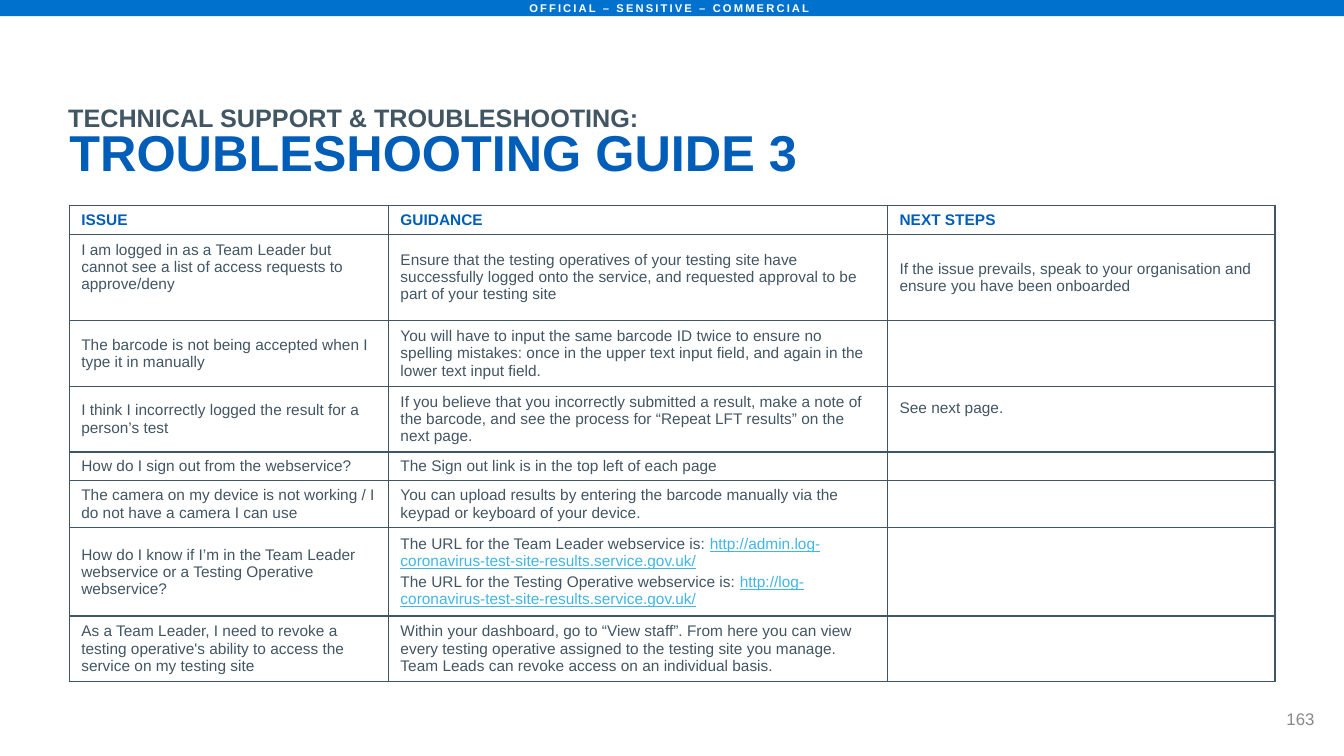
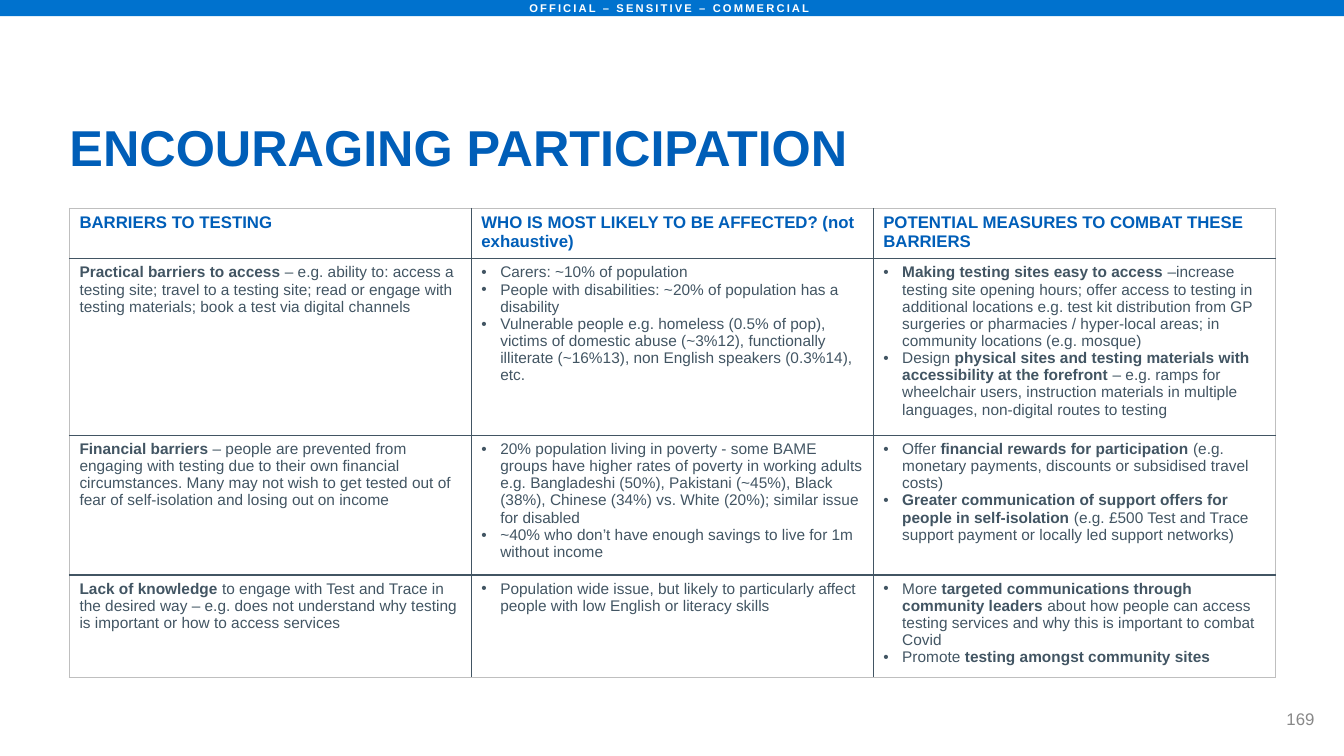
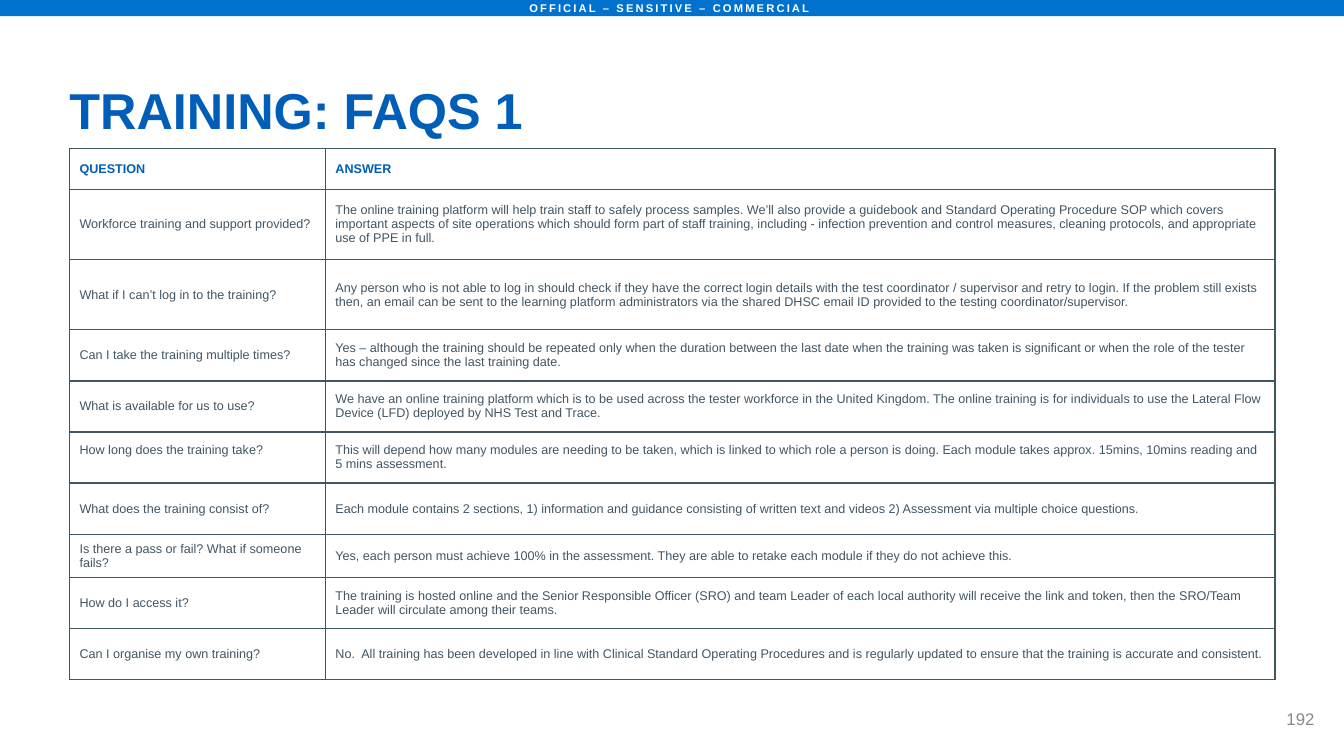
import pptx
import pptx.dml.color
import pptx.enum.shapes
import pptx.enum.text
import pptx.oxml.ns
import pptx.util
from lxml import etree

Pt = pptx.util.Pt
RGBColor = pptx.dml.color.RGBColor
ALIGN = pptx.enum.text.PP_ALIGN
ANCHOR = pptx.enum.text.MSO_ANCHOR
qn = pptx.oxml.ns.qn

BLUE = RGBColor(0x00, 0x5E, 0xB8)
BAND_BLUE = RGBColor(0x00, 0x72, 0xCE)
LINK_BLUE = RGBColor(0x41, 0xB6, 0xE6)
SLATE = RGBColor(0x42, 0x55, 0x63)
GREY = RGBColor(0x88, 0x88, 0x88)
PALE_GREY = RGBColor(0xBF, 0xBF, 0xBF)
WHITE = RGBColor(0xFF, 0xFF, 0xFF)

FONT = "Arial"
SLIDE_W, SLIDE_H = 960, 540
LEFT, TABLE_W = 49.6, 861.2
INDENT = 13.5

GUIDE_ROWS = [
    ["ISSUE", "GUIDANCE", "NEXT STEPS"],
    ["I am logged in as a Team Leader but cannot see a list of access requests to approve/deny",
     "Ensure that the testing operatives of your testing site have successfully logged onto the "
     "service, and requested approval to be part of your testing site",
     "If the issue prevails, speak to your organisation and ensure you have been onboarded"],
    ["The barcode is not being accepted when I type it in manually",
     "You will have to input the same barcode ID twice to ensure no spelling mistakes: once in "
     "the upper text input field, and again in the lower text input field.", ""],
    ["I think I incorrectly logged the result for a person’s test",
     "If you believe that you incorrectly submitted a result, make a note of the barcode, and see "
     "the process for “Repeat LFT results” on the next page.",
     "See next page."],
    ["How do I sign out from the webservice?",
     "The Sign out link is in the top left of each page", ""],
    ["The camera on my device is not working / I do not have a camera I can use",
     "You can upload results by entering the barcode manually via the keypad or keyboard of your "
     "device.", ""],
    ["How do I know if I’m in the Team Leader webservice or a Testing Operative webservice?",
     "The URL for the Team Leader webservice is: "
     "*http://admin.log-coronavirus-test-site-results.service.gov.uk/*\n"
     "The URL for the Testing Operative webservice is: "
     "*http://log-coronavirus-test-site-results.service.gov.uk/*", ""],
    ["As a Team Leader, I need to revoke a testing operative's ability to access the service on my "
     "testing site",
     "Within your dashboard, go to “View staff”. From here you can view every testing operative "
     "assigned to the testing site you manage. Team Leads can revoke access on an individual "
     "basis.", ""],
]

BARRIER_ROWS = [
    ["BARRIERS TO TESTING", "WHO IS MOST LIKELY TO BE AFFECTED? (not exhaustive)",
     "POTENTIAL MEASURES TO COMBAT THESE BARRIERS"],
    ["*Practical barriers to access *– e.g. ability to: access a testing site; travel to a testing "
     "site; read or engage with testing materials; book a test via digital channels",
     "Carers: ~10% of population\n"
     "People with disabilities: ~20% of population has a disability\n"
     "Vulnerable people e.g. homeless (0.5% of pop), victims of domestic abuse (~3%12), "
     "functionally illiterate (~16%13), non English speakers (0.3%14), etc.",
     "*Making testing sites easy to access *–increase testing site opening hours; offer access to "
     "testing in additional locations e.g. test kit distribution from GP surgeries or pharmacies / "
     "hyper-local areas; in community locations (e.g. mosque)\n"
     "Design *physical sites and testing materials with accessibility at the forefront *– e.g. "
     "ramps for wheelchair users, instruction materials in multiple languages, non-digital routes "
     "to testing"],
    ["*Financial barriers *– people are prevented from engaging with testing due to their own "
     "financial circumstances. Many may not wish to get tested out of fear of self-isolation and "
     "losing out on income",
     "20% population living in poverty - some BAME groups have higher rates of poverty in working "
     "adults e.g. Bangladeshi (50%), Pakistani (~45%), Black (38%), Chinese (34%) vs. White (20%); "
     "similar issue for disabled\n"
     "~40% who don’t have enough savings to live for 1m without income",
     "Offer *financial rewards for participation *(e.g. monetary payments, discounts or subsidised "
     "travel costs)\n"
     "*Greater communication of support offers for people in self-isolation* (e.g. £500 Test and "
     "Trace support payment or locally led support networks)"],
    ["*Lack of knowledge *to engage with Test and Trace in the desired way – e.g. does not "
     "understand why testing is important or how to access services",
     "Population wide issue, but likely to particularly affect people with low English or literacy "
     "skills",
     "More *targeted communications through community leaders* about how people can access testing "
     "services and why this is important to combat Covid\n"
     "Promote *testing amongst community sites*"],
]

FAQ_ROWS = [
    ["QUESTION", "ANSWER"],
    ["Workforce training and support provided?",
     "The online training platform will help train staff to safely process samples. We’ll also "
     "provide a guidebook and Standard Operating Procedure SOP which covers important aspects of "
     "site operations which should form part of staff training, including - infection prevention "
     "and control measures, cleaning protocols, and appropriate use of PPE in full."],
    ["What if I can’t log in to the training?",
     "Any person who is not able to log in should check if they have the correct login details "
     "with the test coordinator / supervisor and retry to login. If the problem still exists then, "
     "an email can be sent to the learning platform administrators via the shared DHSC email ID "
     "provided to the testing coordinator/supervisor."],
    ["Can I take the training multiple times?",
     "Yes – although the training should be repeated only when the duration between the last date "
     "when the training was taken is significant or when the role of the tester has changed since "
     "the last training date."],
    ["What is available for us to use?",
     "We have an online training platform which is to be used across the tester workforce in the "
     "United Kingdom. The online training is for individuals to use the Lateral Flow Device (LFD) "
     "deployed by NHS Test and Trace."],
    ["How long does the training take?",
     "This will depend how many modules are needing to be taken, which is linked to which role a "
     "person is doing. Each module takes approx. 15mins, 10mins reading and 5 mins assessment."],
    ["What does the training consist of?",
     "Each module contains 2 sections, 1) information and guidance consisting of written text and "
     "videos 2) Assessment via multiple choice questions."],
    ["Is there a pass or fail? What if someone fails?",
     "Yes, each person must achieve 100% in the assessment. They are able to retake each module if "
     "they do not achieve this."],
    ["How do I access it?",
     "The training is hosted online and the Senior Responsible Officer (SRO) and team Leader of "
     "each local authority will receive the link and token, then the SRO/Team Leader will "
     "circulate among their teams."],
    ["Can I organise my own training?",
     "No.  All training has been developed in line with Clinical Standard Operating Procedures and "
     "is regularly updated to ensure that the training is accurate and consistent."],
]


def add_run(p, text, size, color, bold=False):
    r = p.add_run()
    r.text = text
    r.font.name = FONT
    r.font.size = Pt(size)
    r.font.bold = bold
    r.font.color.rgb = color
    return r


def set_frame(tf, anchor, insets=(7.2, 3.6)):
    tf.word_wrap = True
    tf.vertical_anchor = anchor
    tf.margin_left = tf.margin_right = Pt(insets[0])
    tf.margin_top = tf.margin_bottom = Pt(insets[1])


def add_text(slide, box, text, size, color, bold=False, align=ALIGN.LEFT, anchor=ANCHOR.TOP):
    tf = slide.shapes.add_textbox(*map(Pt, box)).text_frame
    set_frame(tf, anchor)
    p = tf.paragraphs[0]
    p.alignment = align
    add_run(p, text, size, color, bold)


def add_band(slide):
    sp = slide.shapes.add_shape(pptx.enum.shapes.MSO_SHAPE.RECTANGLE, 0, 0, Pt(SLIDE_W), Pt(11.5))
    sp.shadow.inherit = False
    sp.fill.solid()
    sp.fill.fore_color.rgb = BAND_BLUE
    sp.line.fill.background()
    set_frame(sp.text_frame, ANCHOR.MIDDLE, (0, 3.6))
    p = sp.text_frame.paragraphs[0]
    p.alignment = ALIGN.CENTER
    r = add_run(p, "OFFICIAL – SENSITIVE – COMMERCIAL ", 8, WHITE, True)
    r.font._element.set("spc", "150")


def add_page(prs, title, title_top, number):
    """Add a slide with its title, classification band and page number."""
    slide = prs.slides.add_slide(prs.slide_layouts[5])
    sp = slide.shapes.title
    sp.left, sp.top, sp.width, sp.height = map(Pt, (LEFT, title_top, 794, 39.6))
    tf = sp.text_frame
    set_frame(tf, ANCHOR.TOP, (0, 0))
    tf.auto_size = pptx.enum.text.MSO_AUTO_SIZE.SHAPE_TO_FIT_TEXT
    p = tf.paragraphs[0]
    p.alignment = ALIGN.LEFT
    p.line_spacing = 0.9
    add_run(p, title, 36, BLUE, True)
    add_band(slide)
    add_text(slide, (870, 487, 76, 53), number, 12, GREY, align=ALIGN.RIGHT, anchor=ANCHOR.MIDDLE)
    return slide


def add_bullet(p):
    pPr = p._p.get_or_add_pPr()
    pPr.set("marL", str(Pt(INDENT)))
    pPr.set("indent", str(-Pt(INDENT)))
    etree.SubElement(pPr, qn("a:buFont"), typeface=FONT)
    etree.SubElement(pPr, qn("a:buChar"), char="•")


def set_borders(cell, colors):
    """Draw the left, right, top and bottom lines of a cell."""
    tcPr = cell._tc.get_or_add_tcPr()
    for side, color in zip("LRTB", colors):
        ln = etree.SubElement(tcPr, qn("a:ln" + side), w=str(Pt(1)))
        fill = etree.SubElement(ln, qn("a:solidFill"))
        etree.SubElement(fill, qn("a:srgbClr"), val=str(color))


def fill_cell(cell, text, size, color, bold=False, bullets=False, links=False, space_after=0):
    """Write one paragraph a line; stars enclose bold text, or links where links is set."""
    tf = cell.text_frame
    for i, line in enumerate(text.split("\n")):
        p = tf.paragraphs[0] if i == 0 else tf.add_paragraph()
        p.space_after = Pt(space_after)
        if bullets:
            add_bullet(p)
        for j, part in enumerate(line.split("*")):
            marked = j % 2 == 1
            if part and marked and links:
                add_run(p, part, size, LINK_BLUE).font.underline = True
            elif part:
                add_run(p, part, size, color, bold or marked)
        if not line:
            etree.SubElement(p._p, qn("a:endParaRPr"), sz=str(size * 100))


def add_grid(slide, top, rows, widths, heights, size, head_size=None, anchor=ANCHOR.MIDDLE,
             side_inset=7.2, edge=SLATE, bullet_from=None, links=False, space_after=0, raised=None):
    """Add a table; raised maps (row, column) to extra bottom margin, edge colours the outline."""
    frame = slide.shapes.add_table(len(rows), len(widths), Pt(LEFT), Pt(top),
                                   Pt(TABLE_W), Pt(sum(heights)))
    table = frame.table
    table.first_row = table.horz_banding = False
    for column, width in zip(table.columns, widths):
        column.width = Pt(width)
    for row, height in zip(table.rows, heights):
        row.height = Pt(height)
    last_row, last_col = len(rows) - 1, len(widths) - 1
    for i, row in enumerate(rows):
        for j, text in enumerate(row):
            cell = table.cell(i, j)
            cell.vertical_anchor = anchor
            cell.margin_left = cell.margin_right = Pt(side_inset)
            cell.margin_top = Pt(3.6)
            cell.margin_bottom = Pt(3.6 + (raised or {}).get((i, j), 0))
            outer = (j == 0, j == last_col, i == 0, i == last_row)
            set_borders(cell, [edge if o else SLATE for o in outer])
            cell.fill.background()
            if i == 0:
                fill_cell(cell, text, head_size or size, BLUE, bold=True)
            else:
                bullets = bullet_from is not None and j >= bullet_from
                fill_cell(cell, text, size, SLATE, bullets=bullets, links=links,
                          space_after=space_after)


def build_guide(prs):
    slide = add_page(prs, "TROUBLESHOOTING GUIDE 3", 91.4, "163")
    add_grid(slide, 146.8, GUIDE_ROWS, (228, 356.5, 276.7),
             (19.4, 59.2, 44.2, 43.7, 19.6, 31.8, 59.2, 43.7), 11, side_inset=8.5,
             links=True, space_after=3, raised={(1, 0): 15, (3, 2): 15})
    add_text(slide, (41.6, 69.8, 572, 29), "TECHNICAL SUPPORT & TROUBLESHOOTING:", 18, SLATE, True)


def build_barriers(prs):
    slide = add_page(prs, "ENCOURAGING PARTICIPATION", 87.8, "169")
    add_grid(slide, 148.9, BARRIER_ROWS, [TABLE_W / 3] * 3, (34.4, 117.4, 93.2, 68.6), 11,
             head_size=12, anchor=ANCHOR.TOP, edge=PALE_GREY, bullet_from=1)


def build_faqs(prs):
    slide = add_page(prs, "TRAINING: FAQS 1", 61.2, "192")
    add_grid(slide, 106, FAQ_ROWS, (182.8, 678.4),
             [29.3, 50.2, 50.2] + [36.5] * 4 + [31] + [36.5] * 2, 9, raised={(5, 0): 10})


def main():
    prs = pptx.Presentation()
    prs.slide_width, prs.slide_height = Pt(SLIDE_W), Pt(SLIDE_H)
    build_guide(prs)
    build_barriers(prs)
    build_faqs(prs)
    prs.save("out.pptx")


if __name__ == "__main__":
    main()
